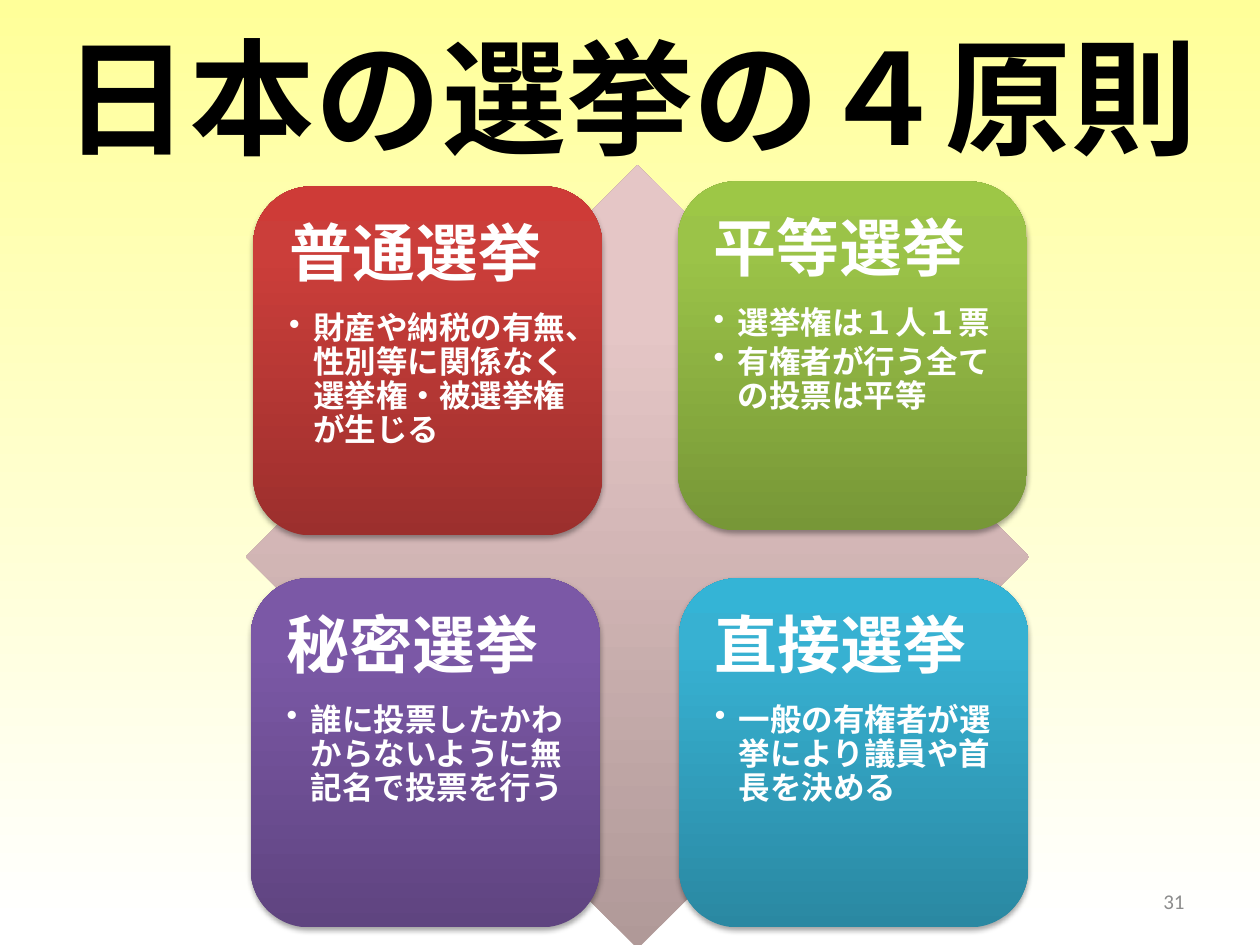
import dataclasses

import lxml.etree
import pptx
import pptx.dml.color
import pptx.enum.shapes
import pptx.enum.text
import pptx.oxml
import pptx.oxml.ns
import pptx.util

Inches = pptx.util.Inches
Pt = pptx.util.Pt
SHAPE = pptx.enum.shapes.MSO_SHAPE
ALIGN = pptx.enum.text.PP_ALIGN
ANCHOR = pptx.enum.text.MSO_ANCHOR
qn = pptx.oxml.ns.qn


@dataclasses.dataclass(frozen=True)
class Theme:
    """Colours, fonts and type sizes of the slide."""
    japanese: str = "Noto Sans CJK JP"
    latin: str = "Calibri"
    title_size: int = 72
    heading_size: int = 36
    point_size: int = 18
    number_size: int = 12
    ink: str = "000000"
    on_card: str = "FFFFFF"
    muted: str = "8C8C8C"
    background: tuple = ((0, "FFFF99"), (98, "FFFFFF"))
    diamond: tuple = ((0, "B09998"), (80, "E5C6C6"), (100, "E6C7C6"))
    red: tuple = ((0, "9C2F2D"), (80, "CB3E3A"), (100, "CE3B37"))
    green: tuple = ((0, "779737"), (80, "9BC348"), (100, "9DC746"))
    purple: tuple = ((0, "5F4480"), (80, "7B58A6"), (100, "7C57A8"))
    blue: tuple = ((0, "2A88A2"), (80, "37B1D2"), (100, "34B4D6"))


THEME = Theme()
CARD_SIZE = 2.77
TEXT_INSET = 0.135
PRINCIPLES = (
    (2.01, 1.48, THEME.red, "普通選挙",
     ["財産や納税の有無、性別等に関係なく選挙権・被選挙権が生じる"]),
    (5.38, 1.44, THEME.green, "平等選挙",
     ["選挙権は１人１票", "有権者が行う全ての投票は平等"]),
    (1.99, 4.59, THEME.purple, "秘密選挙",
     ["誰に投票したかわからないように無記名で投票を行う"]),
    (5.39, 4.59, THEME.blue, "直接選挙",
     ["一般の有権者が選挙により議員や首長を決める"]),
)


def add_child(parent, tag, **attributes):
    """Append an XML element with the given attributes."""
    child = lxml.etree.SubElement(parent, qn(tag))
    for key, value in attributes.items():
        child.set(key, str(value))
    return child


def apply_gradient(fill, owner, stops, angle):
    """Give a fill a linear gradient with any number of stops."""
    fill.gradient()
    gradient = next(owner.iter(qn("a:gradFill")))
    for part in list(gradient):
        gradient.remove(part)
    stop_list = add_child(gradient, "a:gsLst")
    for position, colour in stops:
        stop = add_child(stop_list, "a:gs", pos=position * 1000)
        add_child(stop, "a:srgbClr", val=colour)
    add_child(gradient, "a:lin", ang=angle * 60000, scaled=0)


def add_panel(slide, preset, left, top, size, stops):
    """Add a square, borderless preset shape with a gradient."""
    panel = slide.shapes.add_shape(
        preset, Inches(left), Inches(top), Inches(size), Inches(size))
    panel.shadow.inherit = False
    panel.line.fill.background()
    apply_gradient(panel.fill, panel.element.spPr, stops, 270)
    return panel


def cast_shadow(panel):
    """Put a soft shadow just below a panel."""
    effects = panel.element.spPr.find(qn("a:effectLst"))
    shadow = add_child(effects, "a:outerShdw", blurRad=Pt(3.1), dist=Pt(1.8),
                       dir=90 * 60000, rotWithShape=0)
    colour = add_child(shadow, "a:srgbClr", val=THEME.ink)
    add_child(colour, "a:alpha", val=35000)


def add_text_frame(slide, left, top, width, height, anchor, inset=None):
    """Add a wrapping text box and return its frame."""
    box = slide.shapes.add_textbox(
        Inches(left), Inches(top), Inches(width), Inches(height))
    frame = box.text_frame
    frame.word_wrap = True
    frame.vertical_anchor = anchor
    if inset is not None:
        frame.margin_left = frame.margin_right = Inches(inset)
        frame.margin_top = frame.margin_bottom = Inches(inset)
    return frame


def add_run(paragraph, text, size, colour, font=THEME.japanese, bold=True):
    """Add one styled run to a paragraph."""
    run = paragraph.add_run()
    run.text = text
    run.font.size = Pt(size)
    run.font.bold = bold
    run.font.name = font
    run.font.color.rgb = pptx.dml.color.RGBColor.from_string(colour)
    add_child(run.font._element, "a:ea", typeface=font)


def add_line(slide, place, text, size, colour, align, **style):
    """Add a text box holding a single line, centred vertically."""
    paragraph = add_text_frame(slide, *place, ANCHOR.MIDDLE).paragraphs[0]
    paragraph.alignment = align
    add_run(paragraph, text, size, colour, **style)


def add_bullet(paragraph):
    """Give a paragraph a hanging bullet."""
    paragraph.level = 1
    properties = paragraph._p.get_or_add_pPr()
    properties.set("marL", str(Inches(0.19)))
    properties.set("indent", str(-Inches(0.19)))
    add_child(properties, "a:buChar", char="•")


def add_principle(slide, left, top, stops, heading, points):
    """Add one card with its heading and bulleted points."""
    cast_shadow(add_panel(slide, SHAPE.ROUNDED_RECTANGLE, left, top, CARD_SIZE, stops))
    text_size = CARD_SIZE - 2 * TEXT_INSET
    frame = add_text_frame(slide, left + TEXT_INSET, top + TEXT_INSET,
                           text_size, text_size, ANCHOR.TOP, inset=0.15)
    title = frame.paragraphs[0]
    title.line_spacing = 0.9
    title.space_after = Pt(THEME.heading_size * 0.35)
    add_run(title, heading, THEME.heading_size, THEME.on_card)
    for point in points:
        item = frame.add_paragraph()
        item.line_spacing = 0.9
        item.space_after = Pt(THEME.point_size * 0.15)
        add_bullet(item)
        add_run(item, point, THEME.point_size, THEME.on_card)


def main():
    """Build the slide and save it."""
    deck = pptx.Presentation()
    deck.slide_width, deck.slide_height = Inches(10), Inches(7.5)
    slide = deck.slides.add_slide(deck.slide_layouts[6])
    apply_gradient(slide.background.fill, slide.element, THEME.background, 90)
    add_line(slide, (0.31, 0.13, 9.38, 1.25), "日本の選挙の４原則",
             THEME.title_size, THEME.ink, ALIGN.CENTER)
    add_panel(slide, SHAPE.DIAMOND, 1.95, 1.31, 6.22, THEME.diamond)
    for principle in PRINCIPLES:
        add_principle(slide, *principle)
    add_line(slide, (7.17, 6.95, 2.33, 0.4), "31", THEME.number_size,
             THEME.muted, ALIGN.RIGHT, font=THEME.latin, bold=False)
    deck.save("out.pptx")


if __name__ == "__main__":
    main()
